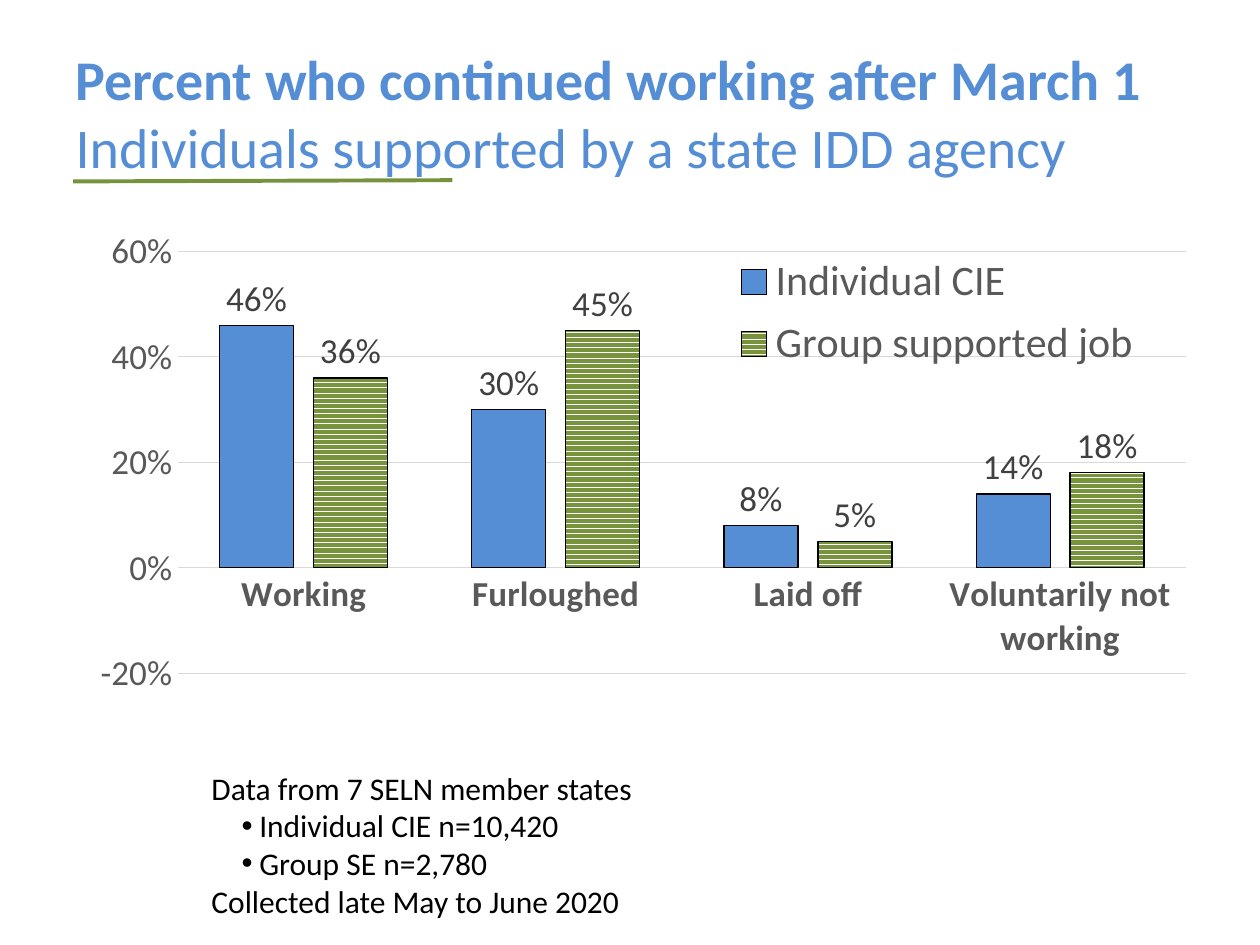
from lxml import etree
from pptx import Presentation
from pptx.chart.data import CategoryChartData
from pptx.dml.color import RGBColor
from pptx.enum.chart import XL_CHART_TYPE, XL_LABEL_POSITION, XL_LEGEND_POSITION, XL_TICK_MARK
from pptx.enum.dml import MSO_PATTERN
from pptx.enum.shapes import MSO_CONNECTOR
from pptx.enum.text import MSO_ANCHOR, MSO_AUTO_SIZE, PP_ALIGN
from pptx.oxml import parse_xml
from pptx.oxml.ns import nsdecls, qn
from pptx.util import Inches, Pt

COLUMNS = XL_CHART_TYPE.COLUMN_CLUSTERED
OUTSIDE = XL_LABEL_POSITION.OUTSIDE_END
BOTTOM = XL_LEGEND_POSITION.BOTTOM
NO_TICK = XL_TICK_MARK.NONE
STRIPES = MSO_PATTERN.DARK_HORIZONTAL
STRAIGHT = MSO_CONNECTOR.STRAIGHT
MIDDLE = MSO_ANCHOR.MIDDLE
GROW = MSO_AUTO_SIZE.SHAPE_TO_FIT_TEXT
LEFT = PP_ALIGN.LEFT

FONT = "Calibri"
BLUE, GREEN, RULE_GREEN = "558ED5", "77933C", "76923C"
GREY, LABEL_GREY, GRID_GREY = "595959", "404040", "D9D9D9"
BLACK, WHITE = "000000", "FFFFFF"

CATEGORIES = ["Working", "Furloughed", "Laid off", "Voluntarily not working"]
SERIES = {
    "Individual CIE": [0.46, 0.30, 0.08, 0.14],
    "Group supported job": [0.36, 0.45, 0.05, 0.18],
}
NOTES = [
    ("Data from 7 SELN member states", False),
    ("Individual CIE n=10,420", True),
    ("Group SE n=2,780", True),
    ("Collected late May to June 2020", False),
]


def rgb(value):
    """Turn a hex string into a colour."""
    return RGBColor.from_string(value)


def box(*lengths):
    """Turn inches into lengths."""
    return [Inches(n) for n in lengths]


def set_font(font, size, color, bold=False):
    """Format a font."""
    font.name, font.size, font.bold = FONT, Pt(size), bold
    font.color.rgb = rgb(color)


def set_line(line, color, width):
    """Format a line."""
    line.color.rgb = rgb(color)
    line.width = Pt(width)


def set_title(slide, heading, subheading):
    """Fill the title with a bold line above a plain one."""
    sp = slide.shapes.title
    sp.left, sp.top, sp.width, sp.height = box(0.5, 0.33, 9.33, 1.12)
    tf = sp.text_frame
    tf.text = f"{heading}\v{subheading}"
    tf.vertical_anchor = MIDDLE
    tf.auto_size = MSO_AUTO_SIZE.NONE
    p = tf.paragraphs[0]
    p.alignment = LEFT
    for r, bold in zip(p.runs, (True, False)):
        set_font(r.font, 32, BLUE, bold)


def add_rule(slide):
    """Draw the line under the title."""
    line = slide.shapes.add_connector(STRAIGHT, *box(0.58, 1.44, 3.59, 1.43))
    set_line(line.line, RULE_GREEN, 2.25)
    etree.SubElement(line._element.spPr, qn("a:effectLst"))


def make_layout(x, y, w, h, inner=False):
    """Build a manual layout from shares of the chart."""
    target = '<c:layoutTarget val="inner"/>' if inner else ""
    return parse_xml(
        f'<c:layout {nsdecls("c")}><c:manualLayout>{target}'
        '<c:xMode val="edge"/><c:yMode val="edge"/>'
        f'<c:x val="{x}"/><c:y val="{y}"/><c:w val="{w}"/><c:h val="{h}"/>'
        "</c:manualLayout></c:layout>"
    )


def format_axes(chart):
    """Format both axes and the gridlines."""
    cat, val = chart.category_axis, chart.value_axis
    for axis in (cat, val):
        axis.major_tick_mark = axis.minor_tick_mark = NO_TICK
        set_font(axis.tick_labels.font, 20, GREY, axis is cat)
    set_line(cat.format.line, GRID_GREY, 0.75)
    val.format.line.fill.background()
    val.minimum_scale, val.maximum_scale, val.major_unit = -0.2, 0.6, 0.2
    val.tick_labels.number_format = "0%"
    val.tick_labels.number_format_is_linked = False
    set_line(val.major_gridlines.format.line, GRID_GREY, 0.75)


def format_series(series, color, striped):
    """Colour a series and label its columns."""
    fill = series.format.fill
    if striped:
        fill.patterned()
        fill.pattern = STRIPES
        fill.back_color.rgb = rgb(WHITE)
    else:
        fill.solid()
    fill.fore_color.rgb = rgb(color)
    set_line(series.format.line, BLACK, 0.75)
    series.invert_if_negative = False
    labels = series.data_labels
    labels.show_value = True
    labels.position = OUTSIDE
    labels.number_format, labels.number_format_is_linked = "0%", False
    set_font(labels.font, 20, LABEL_GREY)


def add_column_chart(slide):
    """Add the clustered columns with their legend."""
    data = CategoryChartData(number_format="0%")
    data.categories = CATEGORIES
    for name, values in SERIES.items():
        data.add_series(name, values)
    chart = slide.shapes.add_chart(COLUMNS, *box(0.42, 1.67, 9, 4.65), data).chart
    chart.has_title = False
    set_font(chart.font, 10, BLACK)
    plot = chart.plots[0]
    plot.gap_width, plot.overlap, plot.vary_by_categories = 114, -27, False
    for series, color, striped in zip(plot.series, (BLUE, GREEN), (False, True)):
        format_series(series, color, striped)
    format_axes(chart)
    chart.has_legend = True
    legend = chart.legend
    legend.position, legend.include_in_layout = BOTTOM, False
    set_font(legend.font, 24, GREY)
    legend._element.find(qn("c:legendPos")).addnext(make_layout(0.58, 0.06, 0.4, 0.23))
    area = chart._chartSpace.chart.plotArea
    for old in area.findall(qn("c:layout")):
        area.remove(old)
    area.insert(0, make_layout(0.11, 0.07, 0.89, 0.72, inner=True))


def add_bullet(p):
    """Give a paragraph a hanging bullet."""
    pPr = p._p.get_or_add_pPr()
    pPr.set("lvl", "1")
    pPr.set("marL", str(Inches(0.38)))
    pPr.set("indent", str(Inches(-0.14)))
    etree.SubElement(pPr, qn("a:buFont"), typeface="Arial")
    etree.SubElement(pPr, qn("a:buChar"), char="•")


def add_notes(slide):
    """Add the data notes below the chart."""
    tf = slide.shapes.add_textbox(*box(1.58, 6.05, 4.33, 1.31)).text_frame
    tf.word_wrap = True
    tf.auto_size = GROW
    for i, (text, bulleted) in enumerate(NOTES):
        p = tf.add_paragraph() if i else tf.paragraphs[0]
        p.text = text
        if bulleted:
            add_bullet(p)
        set_font(p.runs[0].font, 18, BLACK)


def main():
    """Build the slide and save it."""
    prs = Presentation()
    prs.slide_width, prs.slide_height = box(10, 7.5)
    slide = prs.slides.add_slide(prs.slide_layouts[5])
    set_title(slide, "Percent who continued working after March 1",
              "Individuals supported by a state IDD agency")
    add_column_chart(slide)
    add_notes(slide)
    add_rule(slide)
    prs.save("out.pptx")


if __name__ == "__main__":
    main()
